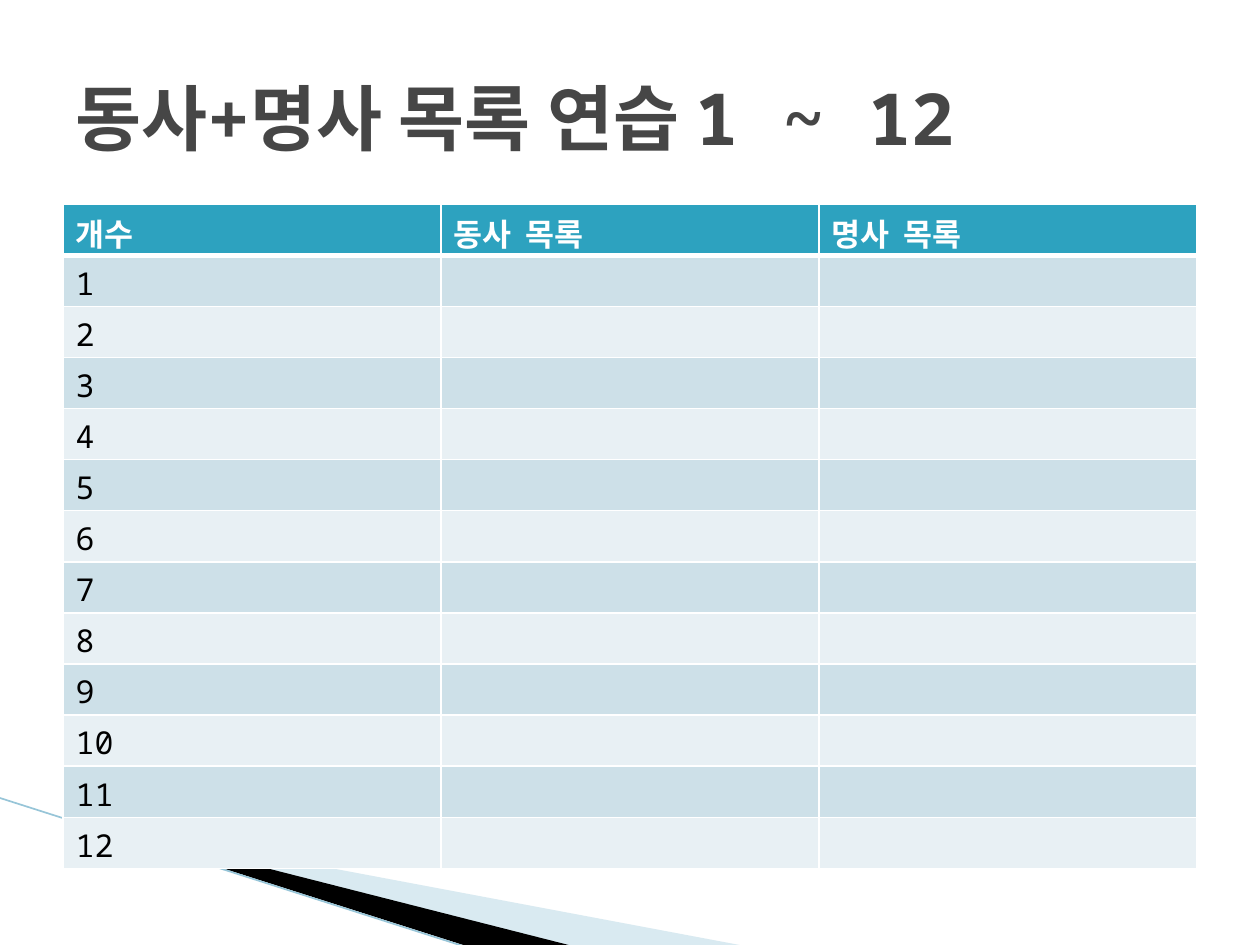
import pptx
import pptx.dml.color
import pptx.enum.shapes
import pptx.enum.text
import pptx.oxml
import pptx.oxml.ns
import pptx.util
from lxml import etree

Pt = pptx.util.Pt
FONT = "Noto Sans Mono"
COLORS = {
    "title": "464646", "header": "2DA2BF", "odd": "CDE0E8", "even": "E8F0F4",
    "white": "FFFFFF", "black": "000000", "pale": "A0CBDC", "line": "97C5D8",
}

TITLE = "동사+명사 목록 연습 1 ~ 12"
HEADERS = ["개수", "동사  목록", "명사  목록"]
ROW_COUNT = 12
TABLE_LEFT, TABLE_TOP, COLUMN_WIDTH, ROW_HEIGHT = 36, 116.64, 216, 29.2

# Corner points, fill colour, opacity in percent
WEDGES = [
    ([(39.6, 468.5), (428.4, 540.7), (328.3, 540.7), (39.6, 468)], "pale", 40),
    ([(38.2, 467.3), (329, 540.7), (267.8, 541.4), (38.9, 468)], "black", 100),
]
EDGE_LINE = [(-0.7, 455.8), (267.1, 541.4)]


def rgb(name):
    return pptx.dml.color.RGBColor.from_string(COLORS[name])


def style(paragraph, size, color, bold):
    font = paragraph.font
    font.name, font.size, font.bold = FONT, Pt(size), bold
    font.color.rgb = rgb(color)


def add_wedge(slide, points, color, opacity):
    builder = slide.shapes.build_freeform(*points[0], scale=Pt(1))
    builder.add_line_segments(points[1:], close=True)
    shape = builder.convert_to_shape()
    shape.shadow.inherit = False
    shape.line.fill.background()
    shape.fill.solid()
    shape.fill.fore_color.rgb = rgb(color)
    if opacity < 100:
        color_element = shape.fill._xPr.find(".//" + pptx.oxml.ns.qn("a:srgbClr"))
        alpha = etree.SubElement(color_element, pptx.oxml.ns.qn("a:alpha"))
        alpha.set("val", str(opacity * 1000))


def set_borders(cell, bottom_width):
    properties = cell._tc.get_or_add_tcPr()
    widths = {"lnL": 1, "lnR": 1, "lnT": 1, "lnB": bottom_width}
    for position, (tag, width) in enumerate(widths.items()):
        border = pptx.oxml.parse_xml(
            f'<a:{tag} {pptx.oxml.ns.nsdecls("a")} w="{Pt(width)}"><a:solidFill>'
            f'<a:srgbClr val="{COLORS["white"]}"/></a:solidFill></a:{tag}>')
        properties.insert(position, border)


def add_list_table(slide):
    rows = [HEADERS] + [[str(number), "", ""] for number in range(1, ROW_COUNT + 1)]
    table = slide.shapes.add_table(
        len(rows), len(HEADERS), Pt(TABLE_LEFT), Pt(TABLE_TOP),
        Pt(COLUMN_WIDTH * len(HEADERS)), Pt(ROW_HEIGHT * len(rows))).table
    for column in table.columns:
        column.width = Pt(COLUMN_WIDTH)
    for row_index, texts in enumerate(rows):
        table.rows[row_index].height = Pt(ROW_HEIGHT)
        is_header = row_index == 0
        fill = "header" if is_header else "odd" if row_index % 2 else "even"
        for column_index, text in enumerate(texts):
            cell = table.cell(row_index, column_index)
            cell.text = text
            style(cell.text_frame.paragraphs[0], 18,
                  "white" if is_header else "black", is_header)
            cell.fill.solid()
            cell.fill.fore_color.rgb = rgb(fill)
            # The rule under the header is shared with the first body row
            set_borders(cell, 3 if is_header else 1)
            if row_index == 1:
                top = cell._tc.tcPr.find(pptx.oxml.ns.qn("a:lnT"))
                top.set("w", str(Pt(3)))


def main():
    presentation = pptx.Presentation()
    presentation.slide_width, presentation.slide_height = Pt(720), Pt(540)
    slide = presentation.slides.add_slide(presentation.slide_layouts[6])

    for points, color, opacity in WEDGES:
        add_wedge(slide, points, color, opacity)

    start, end = EDGE_LINE
    connector = slide.shapes.add_connector(
        pptx.enum.shapes.MSO_CONNECTOR.STRAIGHT, *map(Pt, start + end))
    connector.line.color.rgb = rgb("line")
    connector.line.width = Pt(0.95)
    etree.SubElement(connector._element.spPr, pptx.oxml.ns.qn("a:effectLst"))

    title_box = slide.shapes.add_textbox(Pt(36), Pt(21.6), Pt(648), Pt(90))
    frame = title_box.text_frame
    frame.word_wrap = True
    frame.vertical_anchor = pptx.enum.text.MSO_ANCHOR.MIDDLE
    frame.text = TITLE
    style(frame.paragraphs[0], 41, "title", True)

    add_list_table(slide)
    presentation.save("out.pptx")


if __name__ == "__main__":
    main()
